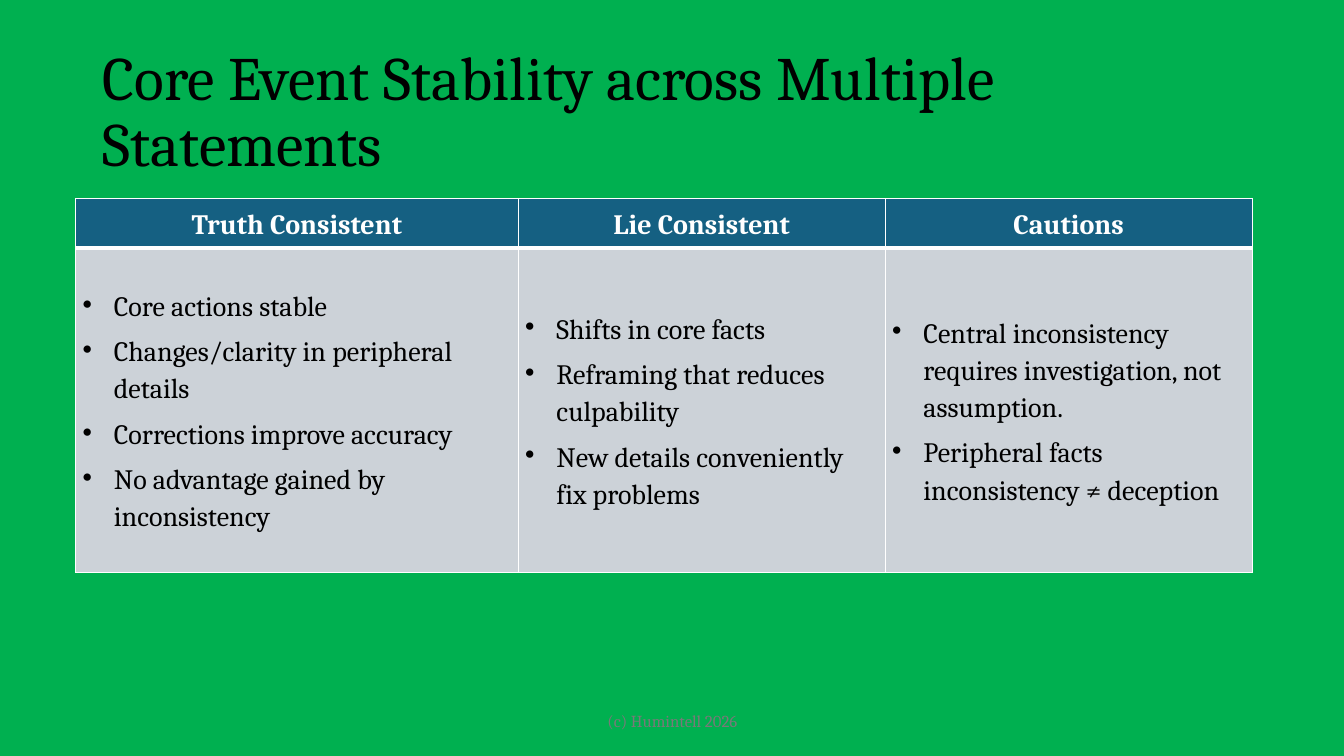
from lxml import etree
from pptx import Presentation
from pptx.dml.color import RGBColor
from pptx.enum.text import MSO_ANCHOR, PP_ALIGN
from pptx.oxml.ns import qn
from pptx.util import Pt

PX = 9144  # EMU per px, 100 px to the inch
LEFT, CENTER = PP_ALIGN.LEFT, PP_ALIGN.CENTER
MIDDLE = MSO_ANCHOR.MIDDLE

GREEN = RGBColor(0x00, 0xB0, 0x50)
BLUE = RGBColor(0x15, 0x60, 0x82)
PALE = RGBColor(0xCC, 0xD2, 0xD8)
BLACK = RGBColor(0x00, 0x00, 0x00)
WHITE = RGBColor(0xFF, 0xFF, 0xFF)
GRAY = RGBColor(0x79, 0x79, 0x79)

COLUMNS = {
    "Truth Consistent": [
        "Core actions stable",
        "Changes/clarity in peripheral details",
        "Corrections improve accuracy",
        "No advantage gained by inconsistency",
    ],
    "Lie Consistent": [
        "Shifts in core facts",
        "Reframing that reduces culpability",
        "New details conveniently fix problems",
    ],
    "Cautions": [
        "Central inconsistency requires investigation, not assumption.",
        "Peripheral facts inconsistency ≠ deception",
    ],
}


class SlideBuilder:
    font_name = "Cambria"
    cell_inset = 7
    bullet_indent = 31
    border_color = WHITE

    def __init__(self, slide):
        self.slide = slide

    def background(self, color):
        fill = self.slide.background.fill
        fill.solid()
        fill.fore_color.rgb = color

    def set_font(self, paragraph, size, color, bold=False):
        font = paragraph.font
        font.name = self.font_name
        font.size = Pt(size)
        font.bold = bold
        font.color.rgb = color

    def text(self, left, top, width, height, text, size, color, align=LEFT, spacing=1.0):
        shape = self.slide.shapes.add_textbox(left * PX, top * PX, width * PX, height * PX)
        frame = shape.text_frame
        frame.word_wrap = True
        frame.vertical_anchor = MIDDLE
        paragraph = frame.paragraphs[0]
        paragraph.text = text
        paragraph.alignment = align
        paragraph.line_spacing = spacing
        self.set_font(paragraph, size, color)

    def bullet(self, paragraph):
        properties = paragraph._p.get_or_add_pPr()
        properties.set("marL", str(self.bullet_indent * PX))
        properties.set("indent", str(-self.bullet_indent * PX))
        etree.SubElement(properties, qn("a:buChar"), char="•")

    def borders(self, cell, top, bottom):
        """Line all four sides; top and bottom are widths in points."""
        properties = cell._tc.get_or_add_tcPr()
        for side, width in (("L", 1), ("R", 1), ("T", top), ("B", bottom)):
            line = etree.SubElement(properties, qn("a:ln" + side), w=str(Pt(width)))
            fill = etree.SubElement(line, qn("a:solidFill"))
            etree.SubElement(fill, qn("a:srgbClr"), val=str(self.border_color))

    def cell(self, cell, lines, fill, color, header):
        self.borders(cell, top=1 if header else 3, bottom=3 if header else 1)
        cell.fill.solid()
        cell.fill.fore_color.rgb = fill
        cell.vertical_anchor = MIDDLE
        cell.margin_left = cell.margin_right = self.cell_inset * PX
        cell.margin_top = cell.margin_bottom = 0
        cell.text = "\n".join(lines)
        for paragraph in cell.text_frame.paragraphs:
            paragraph.alignment = CENTER if header else LEFT
            paragraph.line_spacing = 1.15
            paragraph.space_after = Pt(6)
            if not header:
                self.bullet(paragraph)
            self.set_font(paragraph, 20, color, bold=header)

    def table(self, left, top, widths, heights, columns):
        """Draw one column per heading, with its points as bullets below."""
        table = self.slide.shapes.add_table(
            len(heights), len(widths), left * PX, top * PX, sum(widths) * PX, sum(heights) * PX
        ).table
        for row, height in zip(table.rows, heights):
            row.height = height * PX
        for index, (heading, points) in enumerate(columns.items()):
            table.columns[index].width = widths[index] * PX
            self.cell(table.cell(0, index), [heading], BLUE, WHITE, header=True)
            self.cell(table.cell(1, index), points, PALE, BLACK, header=False)


def main():
    presentation = Presentation()
    presentation.slide_width = 1333 * PX
    presentation.slide_height = 750 * PX
    builder = SlideBuilder(presentation.slides.add_slide(presentation.slide_layouts[6]))
    builder.background(GREEN)
    builder.text(92, 40, 1150, 145, "Core Event Stability across Multiple Statements",
                 44, BLACK, spacing=0.9)
    builder.table(75, 197, [439, 364, 364], [49, 322], COLUMNS)
    builder.text(442, 695, 450, 40, "(c) Humintell 2026", 12, GRAY, align=CENTER)
    presentation.save("out.pptx")


if __name__ == "__main__":
    main()
